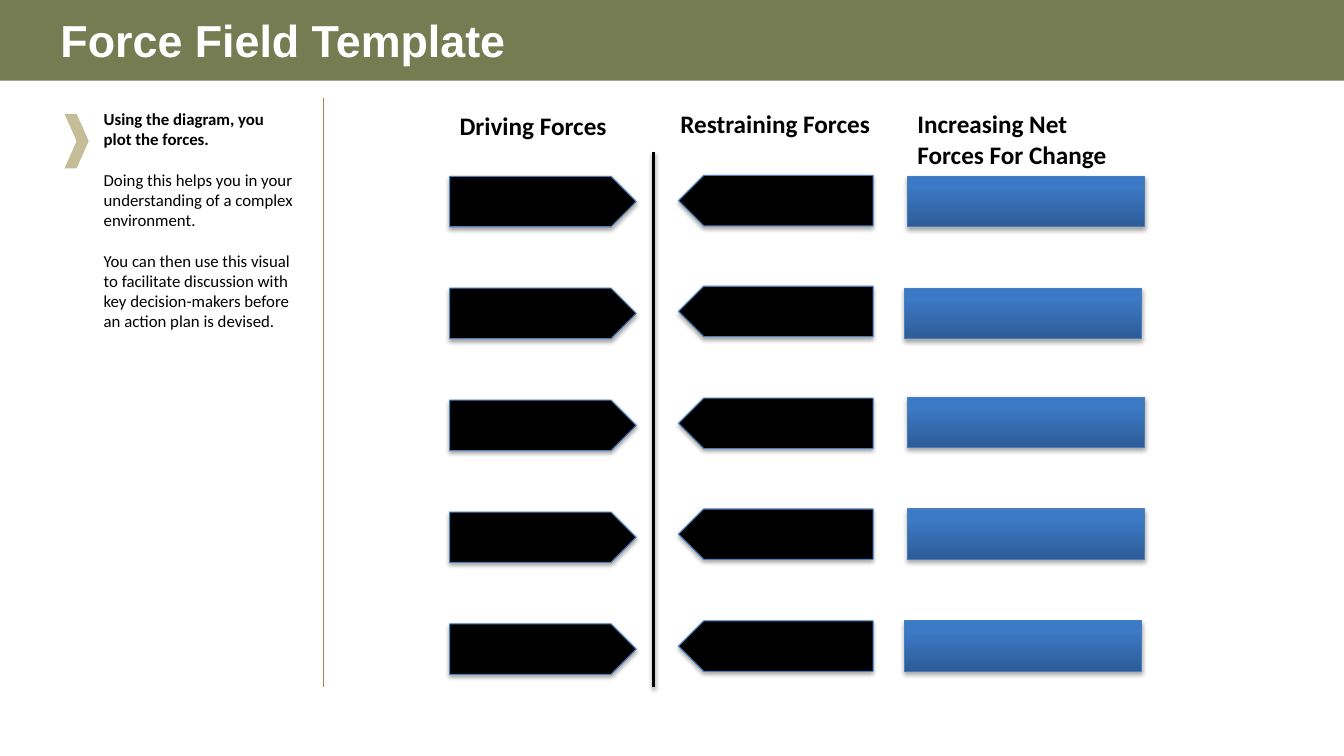
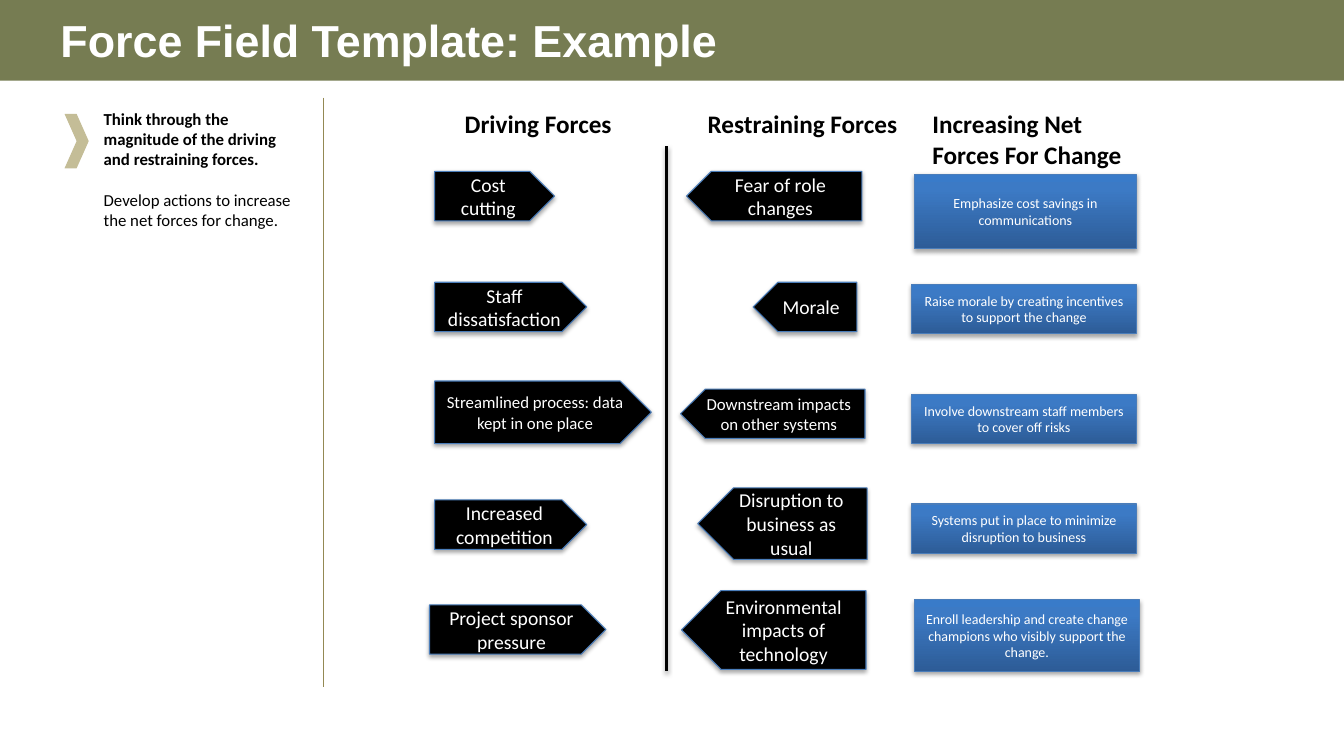
"""Build a force field template and a worked example of it."""
from copy import deepcopy

from lxml import etree
from pptx import Presentation
from pptx import util as u
from pptx.dml.color import RGBColor
from pptx.enum import shapes, text
from pptx.oxml.ns import qn

PX = 9144
COLORS = {
    "band": "767C52",
    "rule": "938953",
    "chevron": "C4BD97",
    "black": "000000",
    "white": "FFFFFF",
    "outline": "4A7DBA",
}
NET_GRADIENT = [(0, "2D5C97"), (0.8, "3C7AC5"), (1, "397BC9")]
HEADINGS = ["Driving Forces", "Restraining Forces", "Increasing Net Forces For Change"]
BODY_GAP = 14.6

TEMPLATE = {
    "title": "Force Field Template",
    "notes": [
        "Using the diagram, you plot the forces.",
        "Doing this helps you in your understanding of a complex environment.",
        "You can then use this visual to facilitate discussion with key "
        "decision-makers before an action plan is devised.",
    ],
    "axis": (648, 151, 682),
    "headings": [(446, 105, 185, 43), (665, 103, 224, 43), (900, 103, 232, 75)],
    "driving": [(446, 175 + 111 * row, 185, 50) for row in range(5)],
    "restraining": [(673, 174 + 221 * row // 2, 193, 50) for row in range(5)],
    "net": [
        (left, top, 235, 50)
        for left, top in [(900, 175), (897, 286), (900, 394), (900, 505), (897, 616)]
    ],
}

EXAMPLE = {
    "title": "Force Field Template: Example",
    "notes": [
        "Think through the magnitude of the driving and restraining forces.",
        "Develop actions to increase the net forces for change.",
    ],
    "axis": (661, 145, 666),
    "headings": [(451, 103, 175, 42), (692, 103, 212, 42), (915, 103, 220, 62)],
    "driving": [
        (431, 170, 119, 49, "Cost cutting", 14),
        (431, 280, 151, 49, "Staff dissatisfaction", 14),
        (431, 378, 215, 62, "Streamlined process: data kept in one place", 12),
        (431, 496, 151, 49, "Increased competition", 14),
        (426, 600, 175, 49, "Project sponsor pressure", 14),
    ],
    "restraining": [
        (681, 170, 174, 49, "Fear of role changes", 14),
        (747, 280, 103, 49, "Morale", 14),
        (675, 386, 183, 49, "Downstream impacts on other systems", 12),
        (692, 484, 168, 71, "Disruption to business as usual", 14),
        (676, 586, 183, 78, "Environmental impacts of technology", 14),
    ],
    "net": [
        (907, 173, 220, 74, "Emphasize cost savings in communications", 10),
        (904, 282, 223, 49, "Raise morale by creating incentives to support the change", 10),
        (904, 391, 223, 49, "Involve downstream staff members to cover off risks", 10),
        (904, 500, 223, 49, "Systems put in place to minimize disruption to business", 10),
        (907, 595, 223, 71,
         "Enroll leadership and create change champions who visibly support the change.", 10),
    ],
}


def px(*lengths):
    """Turn pixel lengths into EMU."""
    return [u.Emu(length * PX) for length in lengths]


def rgb(name):
    """Look up a named colour."""
    return RGBColor.from_string(COLORS[name])


def add_run(paragraph, words, size, color, bold=False, font="Calibri"):
    """Add one formatted run to a paragraph."""
    run = paragraph.add_run()
    run.text = words
    run.font.size = u.Pt(size)
    run.font.name = font
    run.font.bold = bold
    run.font.color.rgb = rgb(color)


def add_shadow(shape, distance, alpha):
    """Give a shape or connector a soft shadow straight below it."""
    properties = shape.element.spPr
    effects = etree.SubElement(properties, qn("a:effectLst"))
    shadow = etree.SubElement(
        effects, qn("a:outerShdw"), blurRad="40000", dist=str(distance),
        dir="5400000", rotWithShape="0")
    color = etree.SubElement(shadow, qn("a:srgbClr"), val=COLORS["black"])
    etree.SubElement(color, qn("a:alpha"), val=str(alpha * 1000))


def add_plain_shape(slide, kind, box, color):
    """Add a flat filled shape without outline or shadow."""
    shape = slide.shapes.add_shape(kind, *px(*box))
    shape.shadow.inherit = False
    shape.fill.solid()
    shape.fill.fore_color.rgb = rgb(color)
    shape.line.fill.background()
    return shape


def add_vertical_line(slide, left, top, bottom, color, width):
    """Add a vertical connector."""
    line = slide.shapes.add_connector(
        shapes.MSO_CONNECTOR.STRAIGHT, *px(left, top, left, bottom))
    line.line.color.rgb = rgb(color)
    line.line.width = u.Pt(width)
    return line


def add_text_box(slide, box, paragraphs, size, bold_count=1):
    """Add a wrapped text box whose leading paragraphs are bold."""
    frame = slide.shapes.add_textbox(*px(*box)).text_frame
    frame.word_wrap = True
    for index, words in enumerate(paragraphs):
        paragraph = frame.add_paragraph() if index else frame.paragraphs[0]
        if index:
            paragraph.space_before = u.Pt(BODY_GAP)
        add_run(paragraph, words, size, "black", bold=index < bold_count)


def fill_gradient(shape):
    """Fill a shape with the upward blue gradient."""
    shape.fill.gradient()
    shape.fill.gradient_angle = 90
    stop_list = shape.element.spPr.find(".//" + qn("a:gsLst"))
    stop_list.append(deepcopy(stop_list[0]))
    for stop, (position, color) in zip(shape.fill.gradient_stops, NET_GRADIENT):
        stop.position = position
        stop.color.rgb = RGBColor.from_string(color)


def add_force(slide, column, left, top, width, height, words="", size=14):
    """Add one force arrow or net force box."""
    kind = shapes.MSO_SHAPE.RECTANGLE if column == "net" else shapes.MSO_SHAPE.PENTAGON
    shape = slide.shapes.add_shape(kind, *px(left, top, width, height))
    if column == "net":
        fill_gradient(shape)
    else:
        shape.fill.solid()
        shape.fill.fore_color.rgb = rgb("black")
    if column == "restraining":
        shape.element.spPr.xfrm.set("flipH", "1")
    shape.line.color.rgb = rgb("outline")
    shape.line.width = u.Pt(0.75)
    add_shadow(shape, 23000, 35)
    if words:
        frame = shape.text_frame
        frame.word_wrap = True
        frame.vertical_anchor = text.MSO_ANCHOR.MIDDLE
        frame.paragraphs[0].alignment = text.PP_ALIGN.CENTER
        add_run(frame.paragraphs[0], words, size, "white")


def set_title(slide, words):
    """Fill and format the title placeholder."""
    title = slide.shapes.title
    title.left, title.top, title.width, title.height = px(50, 0, 1097, 78)
    frame = title.text_frame
    frame.word_wrap = True
    frame.auto_size = text.MSO_AUTO_SIZE.NONE
    frame.vertical_anchor = text.MSO_ANCHOR.MIDDLE
    frame.paragraphs[0].alignment = text.PP_ALIGN.LEFT
    add_run(frame.paragraphs[0], words, 32, "white", bold=True, font="Arial")


def add_layout_band(slide):
    """Place the title band on the layout behind every slide."""
    band = add_plain_shape(slide, shapes.MSO_SHAPE.RECTANGLE, (0, 0, 1333, 80), "band")
    slide.slide_layout.shapes.element.insert(2, band.element)


def add_force_field(presentation, content):
    """Add one complete force field slide."""
    slide = presentation.slides.add_slide(presentation.slide_layouts[5])
    set_title(slide, content["title"])
    rule = add_vertical_line(slide, 321, 97, 682, "rule", 0.75)
    etree.SubElement(rule.element.spPr, qn("a:effectLst"))
    add_text_box(slide, (93, 103, 209, 579), content["notes"], 12)
    add_plain_shape(slide, shapes.MSO_SHAPE.CHEVRON, (64, 113, 24, 54), "chevron")
    axis = add_vertical_line(slide, *content["axis"], "black", 2)
    add_shadow(axis, 20000, 38)
    for column in ("driving", "restraining", "net"):
        for force in content[column]:
            add_force(slide, column, *force)
    for box, heading in zip(content["headings"], HEADINGS):
        add_text_box(slide, box, [heading], 18)
    return slide


def main():
    """Build and save the presentation."""
    presentation = Presentation()
    presentation.slide_width, presentation.slide_height = px(1333, 750)
    template_slide = add_force_field(presentation, TEMPLATE)
    add_layout_band(template_slide)
    add_force_field(presentation, EXAMPLE)
    presentation.save("out.pptx")


if __name__ == "__main__":
    main()
